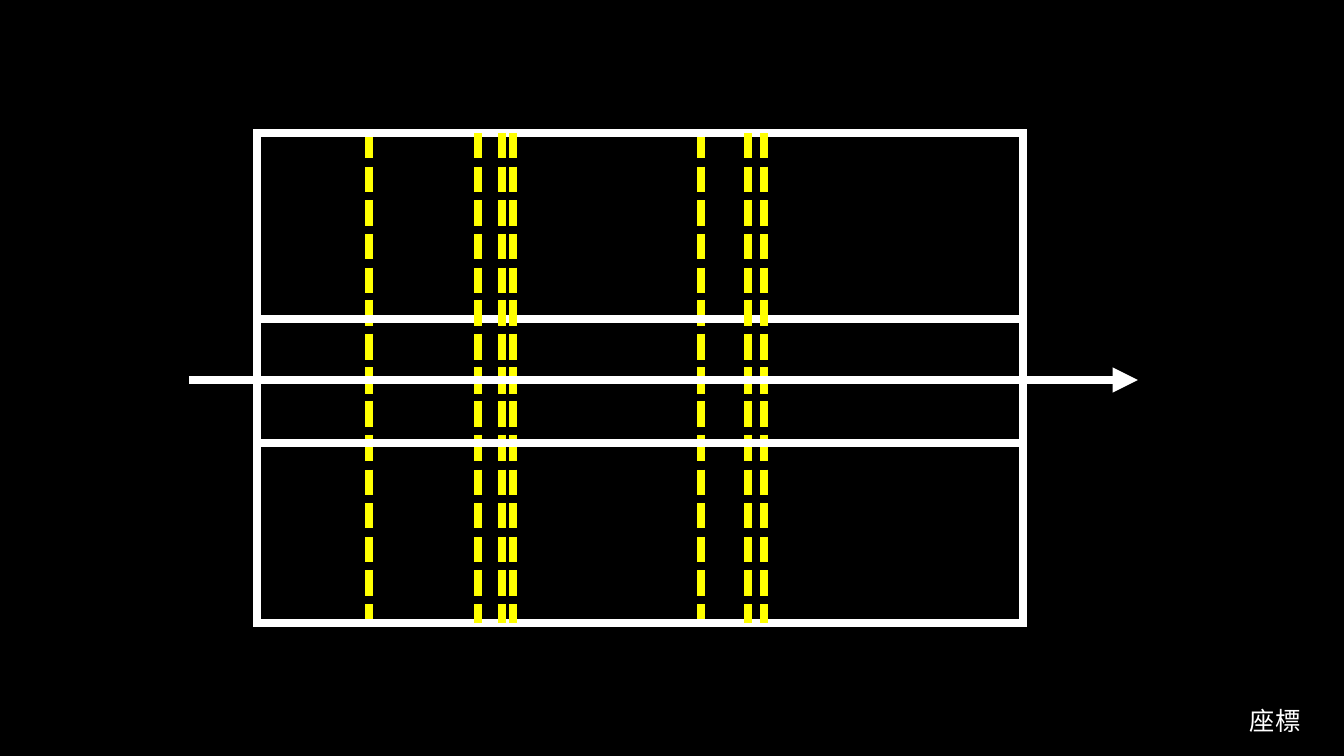
from lxml.etree import SubElement
from pptx import Presentation
from pptx.dml.color import RGBColor
from pptx.enum.dml import MSO_LINE
from pptx.enum.shapes import MSO_CONNECTOR, MSO_SHAPE
from pptx.enum.text import MSO_AUTO_SIZE
from pptx.oxml.ns import qn
from pptx.util import Pt

# Content, lengths in px
CAPTION = "座標"
CAPTION_BOX = (1240, 700, 104, 40)
FONT = "Noto Sans CJK JP"
PAGE_SIZE = (1344, 756)
FRAME_LEFT, FRAME_WIDTH = 257, 766
MARKS_BEHIND = [369, 701]
MARKS_IN_FRONT = [478, 748, 502, 764, 513]
BANDS = [  # frame top, frame height, marks top, marks bottom
    (133, 490, 133, 623),
    (319, 124, 300, 439),
]
AXIS_FROM, AXIS_TO, AXIS_Y = 189, 1138, 380

BLACK = RGBColor(0x00, 0x00, 0x00)
WHITE = RGBColor(0xFF, 0xFF, 0xFF)
YELLOW = RGBColor(0xFF, 0xFF, 0x00)
STROKE = Pt(6)
EMU_PER_PX = 914400 / 100.8


def emu(*lengths):
    return [round(length * EMU_PER_PX) for length in lengths]


def add_line(shapes, left, top, right, bottom, color):
    line = shapes.add_connector(MSO_CONNECTOR.STRAIGHT, *emu(left, top, right, bottom))
    line.line.color.rgb = color
    line.line.width = STROKE
    SubElement(line._element.spPr, qn("a:effectLst"))
    return line


def add_marks(shapes, positions, top, bottom):
    for x in positions:
        mark = add_line(shapes, x, top, x, bottom, YELLOW)
        mark.line.dash_style = MSO_LINE.SQUARE_DOT
        mark.line._ln.find(qn("a:prstDash")).set("val", "sysDash")


def add_frame(shapes, top, height):
    frame = shapes.add_shape(MSO_SHAPE.RECTANGLE, *emu(FRAME_LEFT, top, FRAME_WIDTH, height))
    frame.shadow.inherit = False
    frame.fill.background()
    frame.line.color.rgb = WHITE
    frame.line.width = STROKE
    SubElement(frame.line._ln, qn("a:miter"), lim="800000")


deck = Presentation()
deck.slide_width, deck.slide_height = emu(*PAGE_SIZE)
page = deck.slides.add_slide(deck.slide_layouts[6])
page.background.fill.solid()
page.background.fill.fore_color.rgb = BLACK

# Framed bands with dashed marks
for frame_top, frame_height, marks_top, marks_bottom in BANDS:
    band = page.shapes.add_group_shape()
    add_marks(band.shapes, MARKS_BEHIND, marks_top, marks_bottom)
    add_frame(band.shapes, frame_top, frame_height)
    add_marks(band.shapes, MARKS_IN_FRONT, marks_top, marks_bottom)

# Axis arrow
axis = add_line(page.shapes, AXIS_FROM, AXIS_Y, AXIS_TO, AXIS_Y, WHITE)
SubElement(axis.line._ln, qn("a:tailEnd"), type="triangle")

# Caption
box = page.shapes.add_textbox(*emu(*CAPTION_BOX))
box.text_frame.word_wrap = True
box.text_frame.auto_size = MSO_AUTO_SIZE.SHAPE_TO_FIT_TEXT
span = box.text_frame.paragraphs[0].add_run()
span.text = CAPTION
span.font.size = Pt(18)
span.font.name = FONT
span.font.color.rgb = WHITE
SubElement(span.font._element, qn("a:ea"), typeface=FONT)

deck.save("out.pptx")
